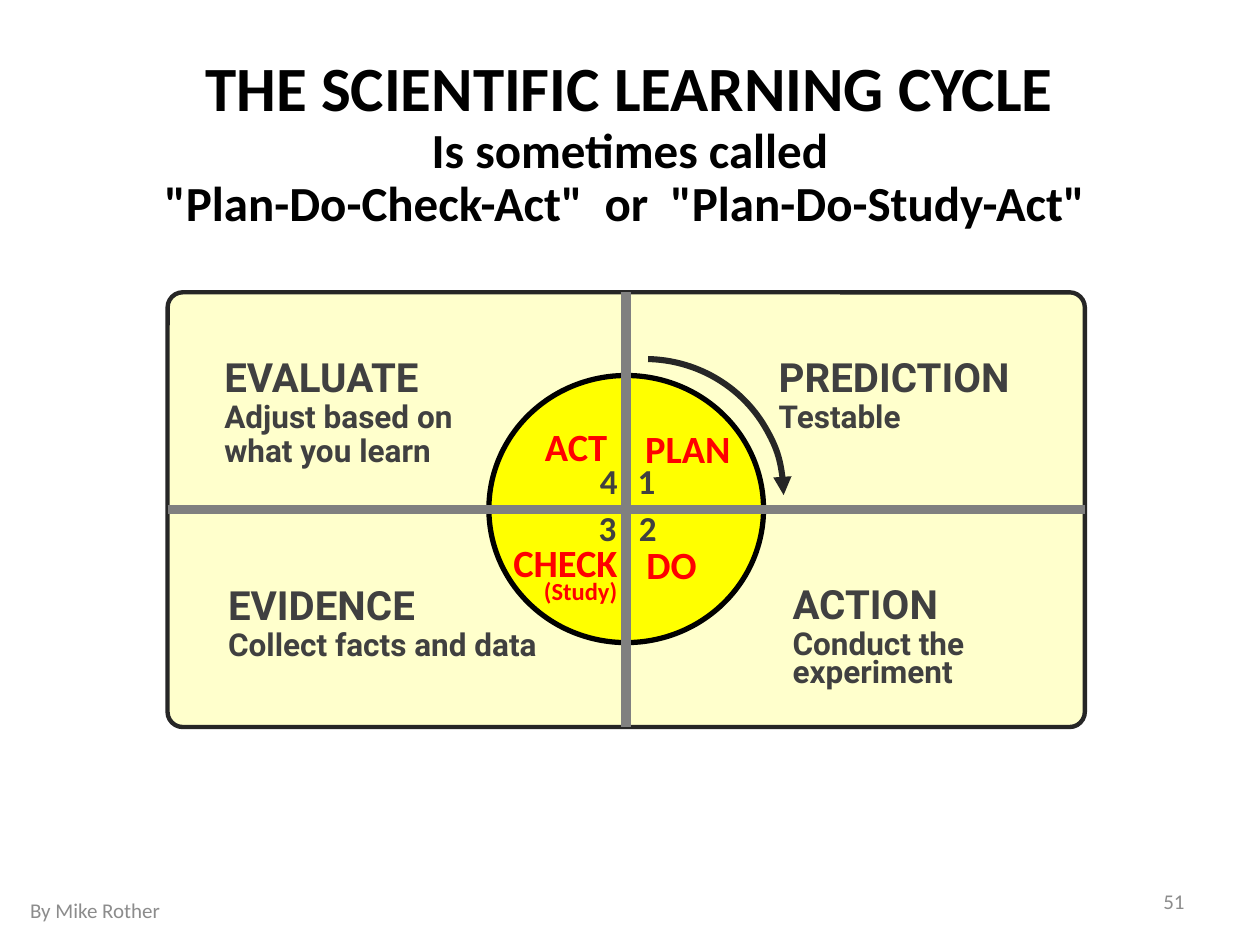
"""Build the scientific learning cycle slide."""
from lxml import etree
from pptx import Presentation
from pptx import util as u
from pptx.dml.color import RGBColor
from pptx.enum import shapes, text
from pptx.oxml import ns

SCALE = 9144
BLACK = RGBColor(0x00, 0x00, 0x00)
INK = RGBColor(0x26, 0x26, 0x26)
SLATE = RGBColor(0x40, 0x40, 0x40)
GREY = RGBColor(0x80, 0x80, 0x80)
PALE_GREY = RGBColor(0x8C, 0x8C, 0x8C)
CREAM = RGBColor(0xFF, 0xFF, 0xCC)
YELLOW = RGBColor(0xFF, 0xFF, 0x00)
RED = RGBColor(0xFF, 0x00, 0x00)
ALIGN = text.PP_ALIGN
ANCHOR = text.MSO_ANCHOR


def px(*lengths):
    return [u.Emu(length * SCALE) for length in lengths]


def assign(target, values):
    for name, value in values.items():
        setattr(target, name, value)


class Painter:
    def __init__(self, page, font):
        self.page = page
        self.font = font

    def outline(self, shape, color, width):
        shape.line.color.rgb = color
        shape.line.width = u.Pt(width)

    def shape(self, kind, place, fill, color, width, adjustments=()):
        shape = self.page.shapes.add_shape(kind, *px(*place))
        shape.shadow.inherit = False
        for index, value in enumerate(adjustments):
            shape.adjustments[index] = value
        if fill is None:
            shape.fill.background()
        else:
            shape.fill.solid()
            shape.fill.fore_color.rgb = fill
        self.outline(shape, color, width)
        return shape

    def arrow(self, place, color, width, adjustments):
        arc = self.shape(shapes.MSO_SHAPE.ARC, place, None, color, width, adjustments)
        line = arc._element.spPr.find(ns.qn("a:ln"))
        etree.SubElement(line, ns.qn("a:tailEnd"), type="triangle")

    def divider(self, panel, start, end, color, width):
        line = self.page.shapes.add_connector(shapes.MSO_CONNECTOR.STRAIGHT, 0, 0, 0, 0)
        line.begin_connect(panel, start)
        line.end_connect(panel, end)
        self.outline(line, color, width)
        etree.SubElement(line._element.spPr, ns.qn("a:effectLst"))

    def fill_text(self, box, place, lines, color, font=None, bold=True, align=ALIGN.LEFT,
                  anchor=ANCHOR.TOP, inset=(9, 4), grow=True):
        """Fill a box with lines of (wording, size, line spacing)."""
        assign(box, dict(zip(("left", "top", "width", "height"), px(*place))))
        across, down = px(*inset)
        frame = box.text_frame
        size_mode = text.MSO_AUTO_SIZE
        assign(frame, {
            "word_wrap": True, "vertical_anchor": anchor,
            "auto_size": size_mode.SHAPE_TO_FIT_TEXT if grow else size_mode.NONE,
            "margin_left": across, "margin_right": across,
            "margin_top": down, "margin_bottom": down,
        })
        for index, (wording, size, spacing) in enumerate(lines):
            para = frame.add_paragraph() if index else frame.paragraphs[0]
            assign(para, {"alignment": align, "line_spacing": spacing})
            span = para.add_run()
            span.text = wording
            assign(span.font, {"name": font or self.font, "size": u.Pt(size), "bold": bold})
            span.font.color.rgb = color

    def label(self, place, lines, color, **style):
        box = self.page.shapes.add_textbox(*px(*place))
        self.fill_text(box, place, lines, color, **style)


def main():
    deck = Presentation()
    deck.slide_width, deck.slide_height = px(1000, 750)
    page = deck.slides.add_slide(deck.slide_layouts[5])
    painter = Painter(page, "Calibri")

    panel = painter.shape(shapes.MSO_SHAPE.ROUNDED_RECTANGLE, (133, 232, 728, 345),
                          CREAM, INK, 2.5, [0.035])
    painter.shape(shapes.MSO_SHAPE.OVAL, (388, 298, 218, 212), YELLOW, BLACK, 3)
    for start, end in ((0, 2), (1, 3)):
        painter.divider(panel, start, end, GREY, 5.5)

    quadrants = [
        ((609, 280, 245, 72), "PREDICTION", [("Testable", 18, 0.9)]),
        ((620, 460, 245, 94), "ACTION", [("Conduct the", 18, 0.9), ("experiment", 18, 0.7)]),
        ((169, 280, 245, 99), "EVALUATE", [("Adjust based on what you learn", 18, 0.9)]),
        ((172, 461, 288, 72), "EVIDENCE", [("Collect facts and data", 18, 0.9)]),
    ]
    for place, heading, details in quadrants:
        painter.label(place, [(heading, 23, 0.9)] + details, SLATE, font="Roboto")

    painter.arrow((402, 285, 220, 216), INK, 3.5, [162.775, 0])

    steps = [
        ((503, 333, 101, 46), [("PLAN", 22, 1.0)], ALIGN.LEFT),
        ((504, 425, 101, 46), [("DO", 22, 1.0)], ALIGN.LEFT),
        ((398, 434, 101, 53), [("CHECK", 22, 0.7), ("(Study)", 14, 0.7)], ALIGN.RIGHT),
        ((390, 332, 101, 46), [("ACT", 22, 1.0)], ALIGN.RIGHT),
    ]
    for place, lines, align in steps:
        painter.label(place, lines, RED, align=align)

    corners = ((497, 361), (498, 398), (466, 398), (467, 361))
    for number, (left, top) in enumerate(corners, 1):
        painter.label((left, top, 32, 43), [(str(number), 20, 1.0)], SLATE)

    footers = [
        ((14, 702, 317, 40), "By Mike Rother", ALIGN.LEFT),
        ((717, 695, 233, 40), "51", ALIGN.RIGHT),
    ]
    for place, wording, align in footers:
        painter.label(place, [(wording, 12, 1.0)], PALE_GREY, bold=False, align=align,
                      anchor=ANCHOR.MIDDLE, inset=(10, 5), grow=False)

    painter.fill_text(page.shapes.title, (27, 46, 945, 60),
                      [("THE SCIENTIFIC LEARNING CYCLE", 36, 0.8)], BLACK, align=ALIGN.CENTER)
    painter.label((0, 96, 1000, 95),
                  [("Is sometimes called", 28, 0.9),
                   ('"Plan-Do-Check-Act"  or  "Plan-Do-Study-Act" ', 28, 0.9)],
                  BLACK, align=ALIGN.CENTER)
    deck.save("out.pptx")


if __name__ == "__main__":
    main()
